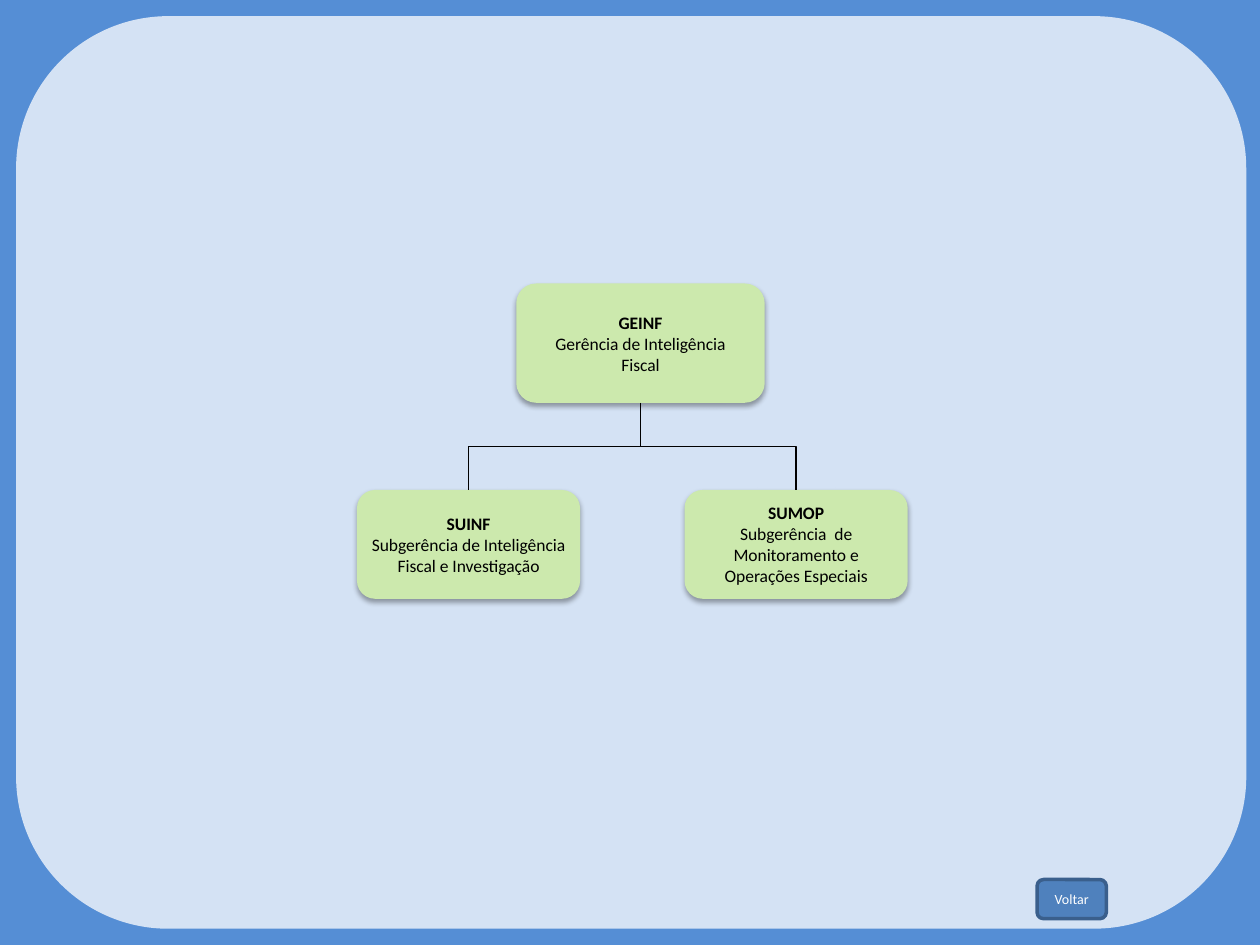
from dataclasses import dataclass

from lxml import etree
from pptx import Presentation
from pptx import util as u
from pptx.dml.color import RGBColor
from pptx.enum import shapes, text
from pptx.oxml import ns


@dataclass(frozen=True)
class Theme:
    background: str = "558ED5"
    panel: str = "D4E2F4"
    unit: str = "CCE9AD"
    button: str = "4F81BD"
    button_line: str = "3A5F8C"
    ink: str = "000000"
    button_ink: str = "FFFFFF"
    font: str = "Calibri"
    unit_size: float = 10
    button_size: float = 8


THEME = Theme()


def color(value):
    return RGBColor.from_string(value)


def set_attributes(target, values):
    for name, value in values.items():
        setattr(target, name, value)


def add_rounded(slide, box, fill, line=None):
    """Add a rounded rectangle; line is a (colour, width) pair or None."""
    shape = slide.shapes.add_shape(
        shapes.MSO_SHAPE.ROUNDED_RECTANGLE, *(u.Pt(length) for length in box))
    shape.shadow.inherit = False
    shape.fill.solid()
    shape.fill.fore_color.rgb = color(fill)
    if line:
        shape.line.color.rgb = color(line[0])
        shape.line.width = u.Pt(line[1])
    else:
        shape.line.fill.background()
    return shape


def write_lines(shape, lines, size, ink, inset=None):
    """Write centred paragraphs from (text, bold) pairs."""
    frame = shape.text_frame
    set_attributes(frame, {"word_wrap": True,
                           "vertical_anchor": text.MSO_ANCHOR.MIDDLE})
    if inset is not None:
        sides = ("left", "top", "right", "bottom")
        set_attributes(frame, {f"margin_{side}": u.Pt(inset) for side in sides})
    for index, (words, bold) in enumerate(lines):
        paragraph = frame.add_paragraph() if index else frame.paragraphs[0]
        paragraph.alignment = text.PP_ALIGN.CENTER
        run = paragraph.add_run()
        run.text = words
        set_attributes(run.font, {"name": THEME.font, "size": u.Pt(size), "bold": bold})
        run.font.color.rgb = color(ink)


def add_shadow(shape):
    effects = shape._element.spPr.find(ns.qn("a:effectLst"))
    shadow = etree.SubElement(
        effects, ns.qn("a:outerShdw"), blurRad=str(u.Pt(3.1)),
        dist=str(u.Pt(1.8)), dir="5400000", algn="t", rotWithShape="0")
    tint = etree.SubElement(shadow, ns.qn("a:srgbClr"), val=THEME.ink)
    etree.SubElement(tint, ns.qn("a:alpha"), val="35000")


def add_unit(slide, box, acronym, name, inset=None):
    shape = add_rounded(slide, box, THEME.unit)
    add_shadow(shape)
    write_lines(shape, [(acronym, True), (name, False)],
                THEME.unit_size, THEME.ink, inset)
    return shape


def add_branch(slide, parent, child):
    """Run an elbow from the parent's bottom to the child's top."""
    start_x = parent.left + parent.width // 2
    end_x = child.left + child.width // 2
    start_y, end_y = parent.top + parent.height, child.top
    center_x, center_y = (start_x + end_x) // 2, (start_y + end_y) // 2
    # An elbow leaves sideways, so lay it out on its side and turn it.
    goes_left = end_x < start_x
    half_run = (end_y - start_y) // 2 * (1 if goes_left else -1)
    half_span = abs(end_x - start_x) // 2
    connector = slide.shapes.add_connector(
        shapes.MSO_CONNECTOR.ELBOW,
        center_x - half_run, center_y - half_span,
        center_x + half_run, center_y + half_span)
    properties = connector._element.spPr
    quarter_turns = 1 if goes_left else 3
    properties.find(ns.qn("a:xfrm")).set("rot", str(quarter_turns * 5400000))
    connector.line.color.rgb = color(THEME.ink)
    connector.line.width = u.Pt(0.75)
    etree.SubElement(properties, ns.qn("a:effectLst"))


def main():
    presentation = Presentation()
    set_attributes(presentation, {"slide_width": u.Pt(720), "slide_height": u.Pt(540)})
    slide = presentation.slides.add_slide(presentation.slide_layouts[6])

    # Background and panel
    slide.background.fill.solid()
    slide.background.fill.fore_color.rgb = color(THEME.background)
    add_rounded(slide, (9.2, 9.2, 703, 521.5), THEME.panel)

    # Management unit
    management = add_unit(slide, (295, 162, 142, 68.2), "GEINF",
                          "Gerência de Inteligência Fiscal")

    # Back button
    button = add_rounded(slide, (592.6, 502.6, 39.6, 22.4), THEME.button,
                         (THEME.button_line, 2))
    write_lines(button, [("Voltar", False)], THEME.button_size, THEME.button_ink)

    # Subordinate units, evenly stepped, and their branches
    subunits = [
        ("SUINF", "Subgerência de Inteligência Fiscal e Investigação"),
        ("SUMOP", "Subgerência  de Monitoramento e Operações Especiais"),
    ]
    for index, (acronym, name) in enumerate(subunits):
        box = (204 + 187.2 * index, 280, 127.5, 62.2)
        subunit = add_unit(slide, box, acronym, name, inset=2.9)
        add_branch(slide, management, subunit)

    presentation.save("out.pptx")


if __name__ == "__main__":
    main()
